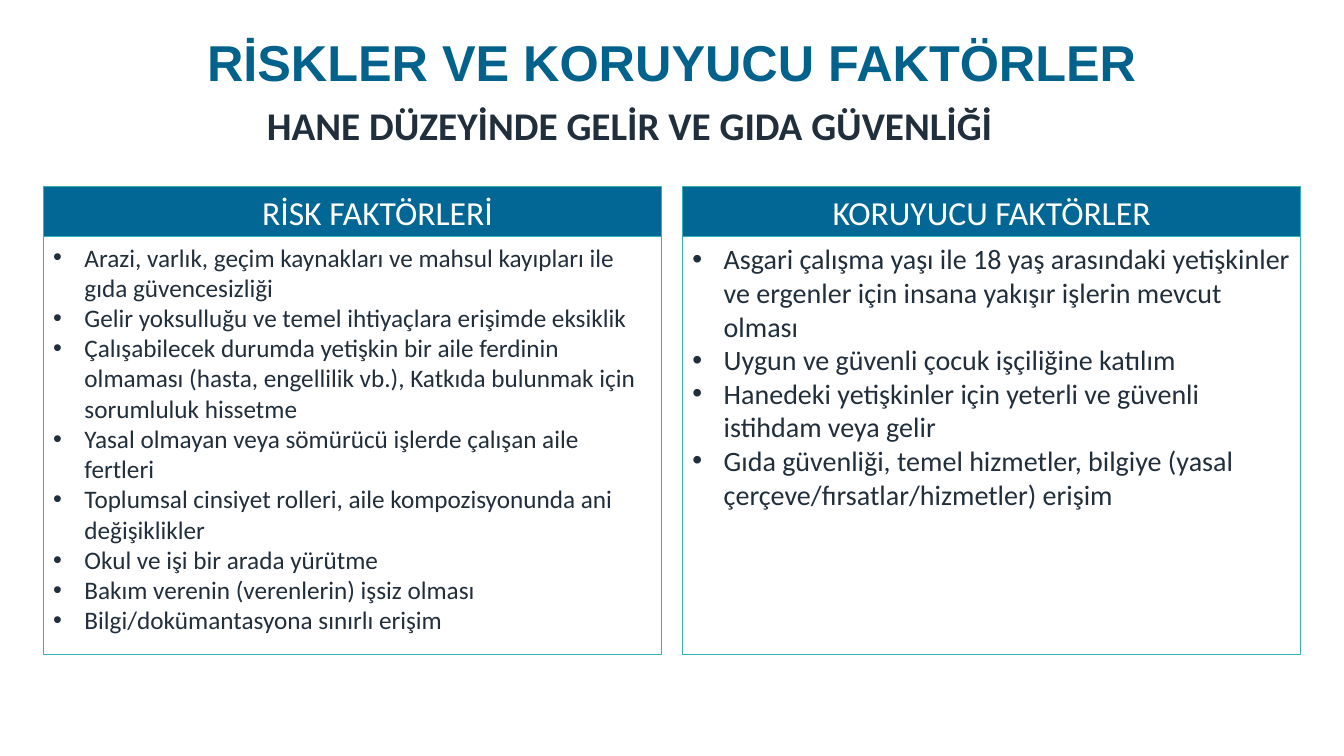
from lxml import etree
from pptx import Presentation
from pptx.dml.color import RGBColor
from pptx.enum.shapes import MSO_SHAPE
from pptx.enum.text import MSO_ANCHOR, PP_ALIGN
from pptx.oxml.ns import qn
from pptx.util import Inches, Pt

TITLE = "RİSKLER VE KORUYUCU FAKTÖRLER"
SUB = "HANE DÜZEYİNDE GELİR VE GIDA GÜVENLİĞİ"
PANELS = [
    {
        "head": "RİSK FAKTÖRLERİ", "indent": 0.5, "size": 18,
        "items": [
            "Arazi, varlık, geçim kaynakları ve mahsul kayıpları ile gıda güvencesizliği",
            "Gelir yoksulluğu ve temel ihtiyaçlara erişimde eksiklik",
            "Çalışabilecek durumda yetişkin bir aile ferdinin olmaması (hasta, "
            "engellilik vb.), Katkıda bulunmak için sorumluluk hissetme",
            "Yasal olmayan veya sömürücü işlerde çalışan aile fertleri",
            "Toplumsal cinsiyet rolleri, aile kompozisyonunda ani değişiklikler",
            "Okul ve işi bir arada yürütme",
            "Bakım verenin (verenlerin) işsiz olması",
            "Bilgi/dokümantasyona sınırlı erişim",
        ],
    },
    {
        "head": "KORUYUCU FAKTÖRLER", "indent": 0, "size": 20,
        "items": [
            "Asgari çalışma yaşı ile 18 yaş arasındaki yetişkinler ve ergenler için "
            "insana yakışır işlerin mevcut olması",
            "Uygun ve güvenli çocuk işçiliğine katılım",
            "Hanedeki yetişkinler için yeterli ve güvenli istihdam veya gelir",
            "Gıda güvenliği, temel hizmetler, bilgiye (yasal "
            "çerçeve/fırsatlar/hizmetler) erişim",
        ],
    },
]
COLORS = {"title": "02628C", "head": "026794", "line": "35B2B4",
          "text": "212E3B", "white": "FFFFFF"}
LEFT, TOP, WIDTH, GAP = 0.43, 1.85, 6.13, 0.21
HEAD_H, BODY_H = 0.5, 4.14
HANG = 0.31


def color(name):
    return RGBColor.from_string(COLORS[name])


def style(par, size, tint, align=PP_ALIGN.LEFT, bold=False, face="Calibri"):
    par.alignment = align
    for run in par.runs:
        font = run.font
        font.name, font.size, font.bold = face, Pt(size), bold
        font.color.rgb = color(tint)


def indent(par, left, first=0.0, bullet=None):
    """Set margin and first-line indent, with an optional bullet sign."""
    props = par._p.get_or_add_pPr()
    props.set("marL", str(Inches(left)))
    props.set("indent", str(Inches(first)))
    if bullet:
        font = etree.SubElement(props, qn("a:buFont"))
        font.set("typeface", "Arial")
        etree.SubElement(props, qn("a:buChar")).set("char", bullet)


def add_box(slide, left, top, height, anchor, fill=None):
    box = slide.shapes.add_shape(MSO_SHAPE.RECTANGLE, Inches(left), Inches(top),
                                 Inches(WIDTH), Inches(height))
    box.shadow.inherit = False
    if fill:
        box.fill.solid()
        box.fill.fore_color.rgb = color(fill)
    else:
        box.fill.background()
    box.line.color.rgb = color("line")
    box.line.width = Pt(0.75)
    frame = box.text_frame
    frame.word_wrap = True
    frame.vertical_anchor = anchor
    return frame


def add_panel(slide, left, panel):
    body = add_box(slide, left, TOP + HEAD_H, BODY_H, MSO_ANCHOR.TOP)
    body.text = "\n".join(panel["items"])
    for par in body.paragraphs:
        style(par, panel["size"], "text")
        indent(par, HANG, -HANG, "•")

    head = add_box(slide, left, TOP, HEAD_H, MSO_ANCHOR.MIDDLE, "head")
    head.text = panel["head"]
    par = head.paragraphs[0]
    style(par, 24, "white", PP_ALIGN.CENTER)
    indent(par, panel["indent"])


def add_title(slide):
    title = slide.shapes.title
    title.left, title.top = Inches(1.81), Inches(-0.08)
    title.width, title.height = Inches(9.71), Inches(1.45)
    frame = title.text_frame
    frame.text = TITLE
    frame.word_wrap = True
    frame.vertical_anchor = MSO_ANCHOR.MIDDLE
    par = frame.paragraphs[0]
    par.line_spacing = 0.9
    style(par, 36, "title", PP_ALIGN.CENTER, True, "Arial")


def add_sub(slide):
    frame = slide.shapes.add_textbox(Inches(2.05), Inches(0.96),
                                     Inches(9.96), Inches(0.57)).text_frame
    frame.word_wrap = True
    frame.text = SUB
    par = frame.paragraphs[0]
    style(par, 28, "text", bold=True)
    indent(par, 0.5)


def main():
    deck = Presentation()
    deck.slide_width, deck.slide_height = Inches(13.33), Inches(7.5)
    slide = deck.slides.add_slide(deck.slide_layouts.get_by_name("Title Only"))
    add_title(slide)
    for col, panel in enumerate(PANELS):
        add_panel(slide, LEFT + col * (WIDTH + GAP), panel)
    add_sub(slide)
    deck.save("out.pptx")


if __name__ == "__main__":
    main()
